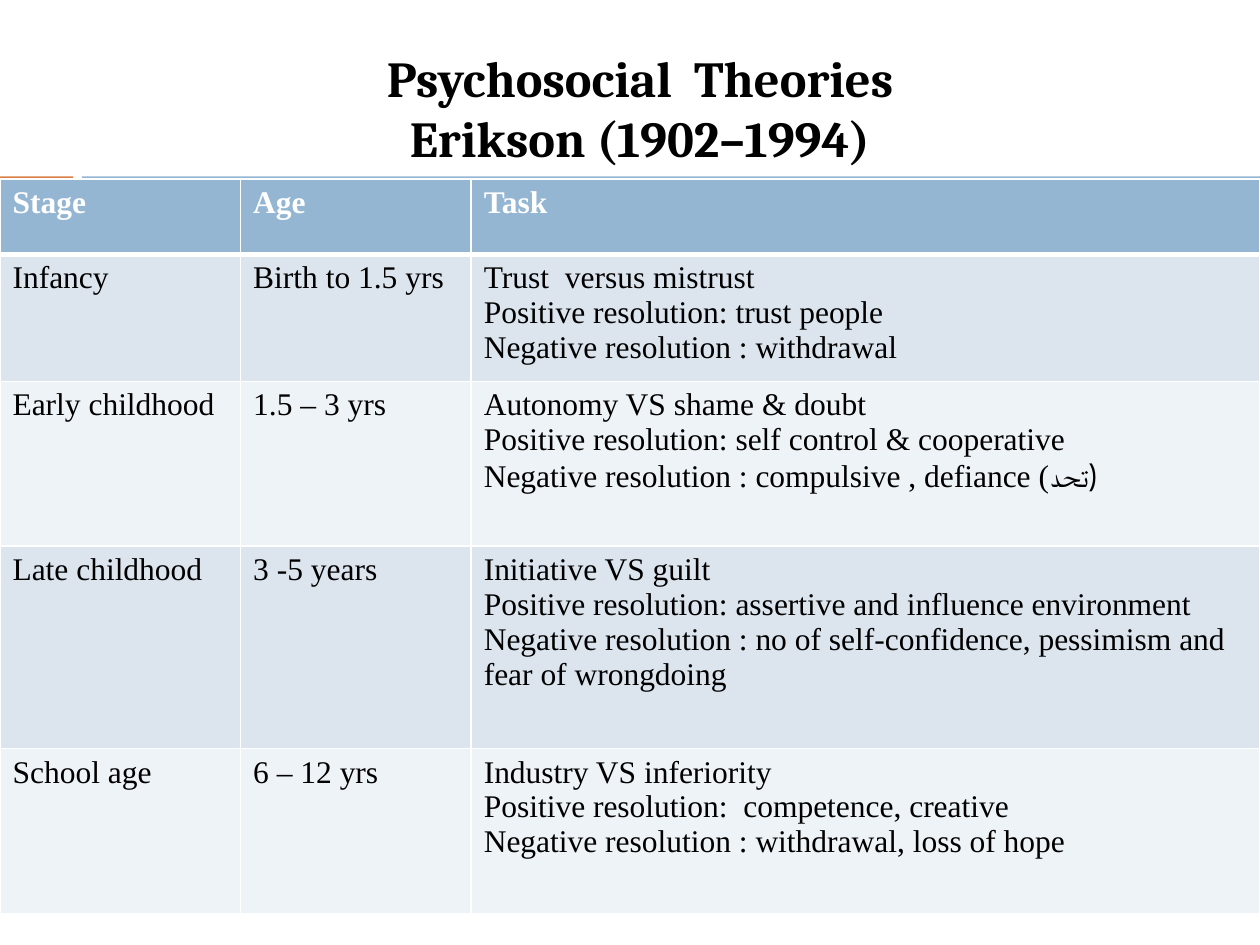
from lxml.etree import SubElement
from pptx import Presentation
from pptx.dml.color import RGBColor
from pptx.enum.shapes import MSO_SHAPE as Shape
from pptx.enum.text import MSO_ANCHOR as Anchor, PP_ALIGN as Align
from pptx.oxml.ns import qn
from pptx.util import Inches, Pt

WIDTH, HEIGHT = 10, 7.5
BLUE, ORANGE, WHITE, BLACK = "94B6D2", "DD8047", "FFFFFF", "000000"
BANDS = ("DCE5EE", "EEF3F7")
BODY_FONT, TITLE_FONT, ARABIC_FONT = "Times New Roman", "Cambria", "Cabin"

COLUMNS = (1.91, 1.83, 6.26)
ROWS = (0.6, 1.01, 1.31, 1.61, 1.31)
TITLE = ["Psychosocial  Theories", "Erikson (1902–1994)"]
HEADER = ("Stage", "Age", "Task")
# A line is a string, or a list of (text, font) spans.
STAGES = [
    ("Infancy", "Birth to 1.5 yrs",
     ["Trust  versus mistrust",
      "Positive resolution: trust people",
      "Negative resolution : withdrawal"]),
    ("Early childhood", "1.5 – 3 yrs",
     ["Autonomy VS shame & doubt",
      "Positive resolution: self control & cooperative",
      [("Negative resolution : compulsive , defiance (", BODY_FONT),
       ("تحد)", ARABIC_FONT)]]),
    ("Late childhood", "3 -5 years",
     ["Initiative VS guilt",
      "Positive resolution: assertive and influence environment",
      "Negative resolution : no of self-confidence, pessimism and "
      "fear of wrongdoing"]),
    ("School age", "6 – 12 yrs",
     ["Industry VS inferiority",
      "Positive resolution:  competence, creative ",
      "Negative resolution : withdrawal, loss of hope"]),
]


def color(value):
    return RGBColor.from_string(value)


def write(frame, lines, size=18, font=BODY_FONT, ink=BLACK, bold=False,
          align=Align.LEFT):
    lines = [lines] if isinstance(lines, str) else lines
    for index, line in enumerate(lines):
        para = frame.paragraphs[0] if index == 0 else frame.add_paragraph()
        para.alignment = align
        spans = [(line, font)] if isinstance(line, str) else line
        for text, face in spans:
            span = para.add_run()
            span.text = text
            span.font.name, span.font.size = face, Pt(size)
            span.font.bold = bold
            span.font.color.rgb = color(ink)


def add_bars(page, left, top, width, height):
    """Draw the short and the long accent bar, parted by a gap."""
    short, gap = 0.058 * width, 0.007 * width
    long_left = short + gap
    for start, length, fill in ((0, short, ORANGE),
                                (long_left, width - long_left, BLUE)):
        bar = page.shapes.add_shape(
            Shape.RECTANGLE, Inches(left + start), Inches(top),
            Inches(length), Inches(height))
        bar.shadow.inherit = False
        bar.fill.solid()
        bar.fill.fore_color.rgb = color(fill)
        bar.line.fill.background()


def add_title(page, left, top, width, height):
    box = page.shapes.add_textbox(*map(Inches, (left, top, width, height)))
    frame = box.text_frame
    frame.word_wrap = True
    frame.vertical_anchor = Anchor.MIDDLE
    write(frame, TITLE, size=28.8, font=TITLE_FONT, bold=True,
          align=Align.CENTER)


def style_cell(cell, fill, bottom=1, top=1):
    """Set white borders, with widths in points, and then the fill."""
    props = cell._tc.get_or_add_tcPr()
    for side, points in (("L", 1), ("R", 1), ("T", top), ("B", bottom)):
        edge = SubElement(props, qn(f"a:ln{side}"), w=str(Pt(points)))
        paint = SubElement(edge, qn("a:solidFill"))
        SubElement(paint, qn("a:srgbClr"), val=WHITE)
    cell.fill.solid()
    cell.fill.fore_color.rgb = color(fill)


def add_stage_table(page, left, top, width, height):
    table = page.shapes.add_table(
        len(ROWS), len(COLUMNS),
        *map(Inches, (left, top, width, height))).table
    for column, share in zip(table.columns, COLUMNS):
        column.width = Inches(width * share / sum(COLUMNS))
    for row, share in zip(table.rows, ROWS):
        row.height = Inches(height * share / sum(ROWS))
    for r, texts in enumerate([HEADER, *STAGES]):
        for c, lines in enumerate(texts):
            cell = table.cell(r, c)
            if r == 0:
                style_cell(cell, BLUE, bottom=3)
                write(cell.text_frame, lines, ink=WHITE, bold=True)
            else:
                style_cell(cell, BANDS[(r - 1) % 2], top=3 if r == 1 else 1)
                write(cell.text_frame, lines)


def main():
    deck = Presentation()
    deck.slide_width, deck.slide_height = Inches(WIDTH), Inches(HEIGHT)
    page = deck.slides.add_slide(deck.slide_layouts[6])
    add_bars(page, 0, 1.4, WIDTH, 0.25)
    add_title(page, 0.33, 0.31, 9.5, 1.08)
    add_stage_table(page, 0, 1.42, WIDTH, 5.83)
    deck.save("out.pptx")


if __name__ == "__main__":
    main()
